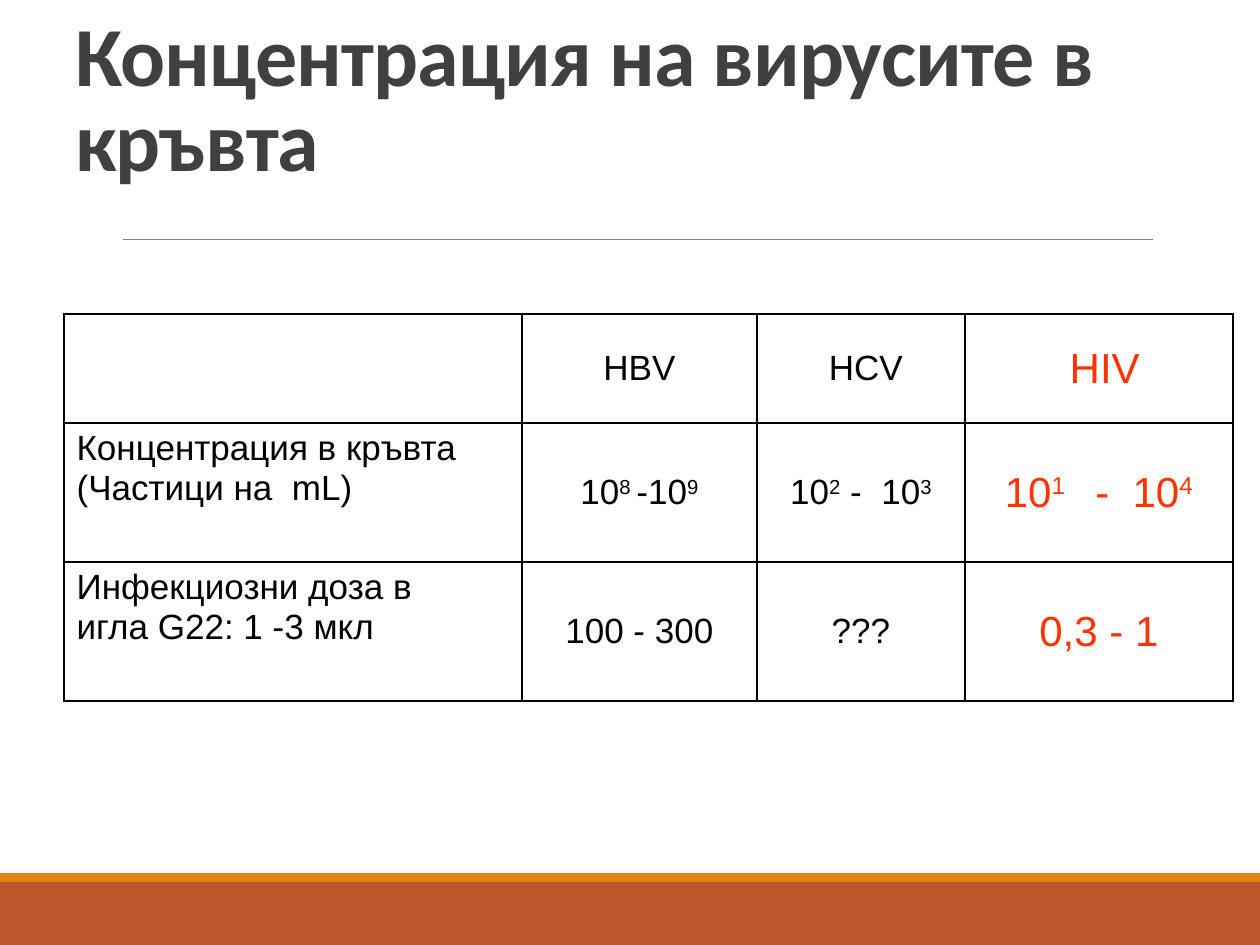
"""Build a slide with a table of virus concentrations in blood."""
from lxml import etree
from pptx import Presentation, util as u
from pptx.dml.color import RGBColor
from pptx.enum import shapes, text
from pptx.oxml import parse_xml
from pptx.oxml.ns import nsdecls, qn

BLACK = RGBColor(0x00, 0x00, 0x00)
DARK = RGBColor(0x40, 0x40, 0x40)
GRAY = RGBColor(0x80, 0x80, 0x80)
RED = RGBColor(0xFF, 0x33, 0x00)
RUST = RGBColor(0xBD, 0x58, 0x2C)
ORANGE = RGBColor(0xE4, 0x83, 0x12)

TITLE = "Концентрация на вирусите в кръвта"
ROWS = [
    ("", "HBV", " HCV", " HIV"),
    ("Концентрация в кръвта\n(Частици на  mL)", "10^8 ^-10^9",
     "10^2^ -  10^3", "10^1 ^  -  10^4"),
    ("Инфекциозни доза в\nигла G22: 1 -3 мкл", "100 - 300", "???", "0,3 - 1"),
]
COLS = (458, 235, 208, 268)
HEIGHTS = (109, 139, 139)
TABLE_AT = (64, 314)
TITLE_BOX = (63, 38, 1134, 157)
RULE = (123, 239, 1153, 239)
BANDS = [((0, 882, 1260, 63), RUST), ((0, 873, 1260, 9), ORANGE)]

TITLE_FONT = dict(name="Calibri", size=u.Pt(48), bold=True)
BODY_FONT = dict(name="Arial", size=u.Pt(20))
HIV_FONT = dict(name="Arial", size=u.Pt(24))


def px(*values):
    return [u.Emu(round(v * 914400 / 126)) for v in values]


def add_run(p, words, fmt, color):
    r = p.add_run()
    r.text = words
    for key, value in fmt.items():
        setattr(r.font, key, value)
    r.font.color.rgb = color
    return r._r.get_or_add_rPr()


def add_borders(cell):
    for side in "LRTB":
        cell._tc.get_or_add_tcPr().append(parse_xml(
            f'<a:ln{side} {nsdecls("a")} w="12700"><a:solidFill>'
            f'<a:srgbClr val="{BLACK}"/></a:solidFill></a:ln{side}>'))


def fill_cell(cell, words, col):
    add_borders(cell)
    cell.fill.background()
    if col:
        cell.vertical_anchor = text.MSO_ANCHOR.MIDDLE
    fmt, color = (HIV_FONT, RED) if col == 3 else (BODY_FONT, BLACK)
    tf = cell.text_frame
    for i, line in enumerate(words.split("\n")):
        p = tf.add_paragraph() if i else tf.paragraphs[0]
        if col:
            p.alignment = text.PP_ALIGN.CENTER
        for j, part in enumerate(line.split("^")):
            if part:
                rpr = add_run(p, part, fmt, color)
                if j % 2:
                    rpr.set("baseline", "30000")


def add_table(slide):
    frame = slide.shapes.add_table(
        len(ROWS), len(COLS), *px(*TABLE_AT, sum(COLS), sum(HEIGHTS)))
    table = frame.table
    table.first_row = table.horz_banding = False
    for column, width in zip(table.columns, px(*COLS)):
        column.width = width
    for row, height in zip(table.rows, px(*HEIGHTS)):
        row.height = height
    for i, row in enumerate(ROWS):
        for j, words in enumerate(row):
            fill_cell(table.cell(i, j), words, j)


def main():
    prs = Presentation()
    prs.slide_width, prs.slide_height = px(1260, 945)
    slide = prs.slides.add_slide(prs.slide_layouts[6])

    for box, color in BANDS:
        sp = slide.shapes.add_shape(shapes.MSO_SHAPE.RECTANGLE, *px(*box))
        sp.shadow.inherit = False
        sp.fill.solid()
        sp.fill.fore_color.rgb = color
        sp.line.fill.background()

    rule = slide.shapes.add_connector(shapes.MSO_CONNECTOR.STRAIGHT, *px(*RULE))
    rule.line.color.rgb = GRAY
    rule.line.width = u.Pt(0.5)
    etree.SubElement(rule._element.spPr, qn("a:effectLst"))

    tf = slide.shapes.add_textbox(*px(*TITLE_BOX)).text_frame
    tf.word_wrap = True
    tf.vertical_anchor = text.MSO_ANCHOR.BOTTOM
    p = tf.paragraphs[0]
    p.line_spacing = 0.85
    add_run(p, TITLE, TITLE_FONT, DARK).set("spc", "-50")

    add_table(slide)
    prs.save("out.pptx")


if __name__ == "__main__":
    main()
